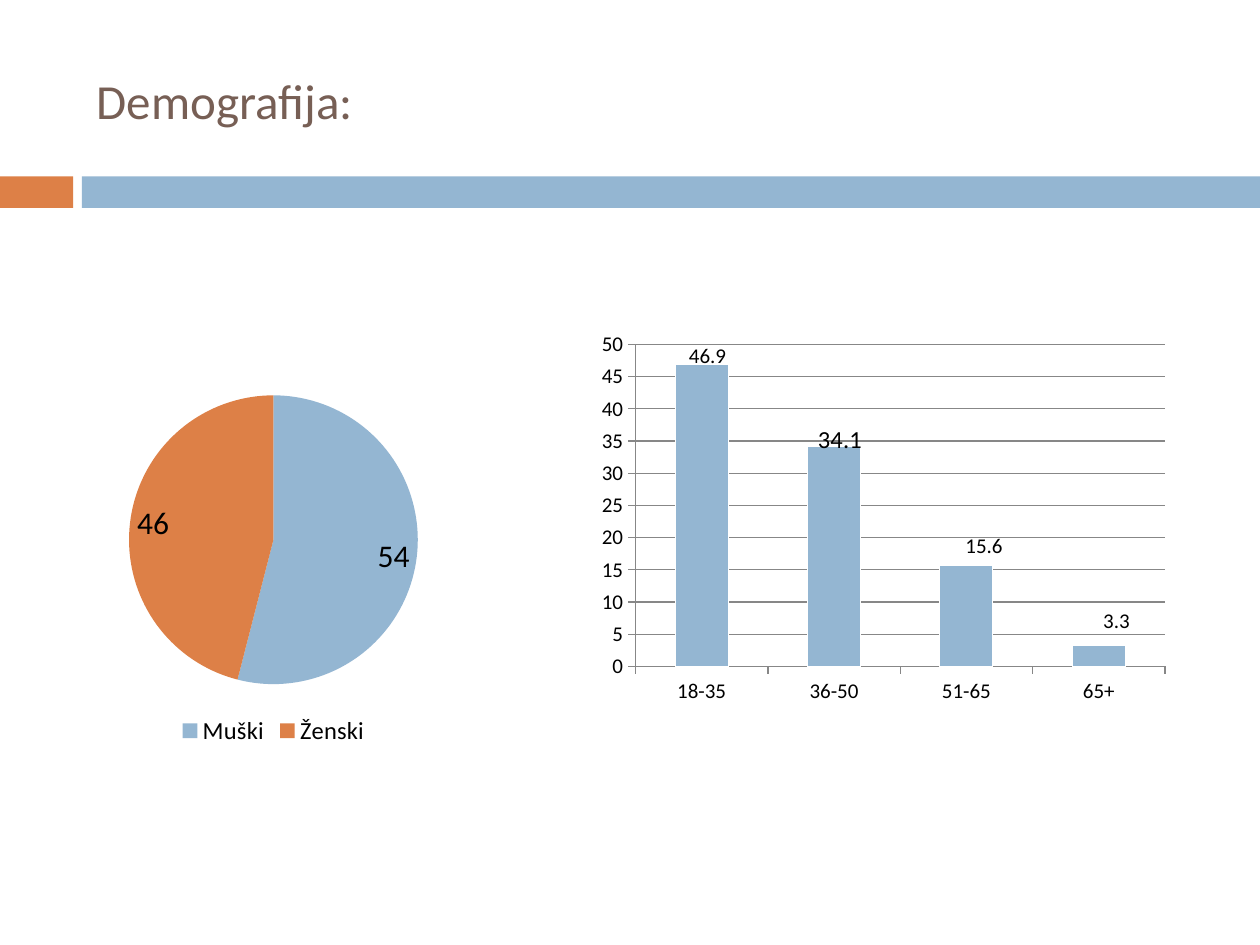
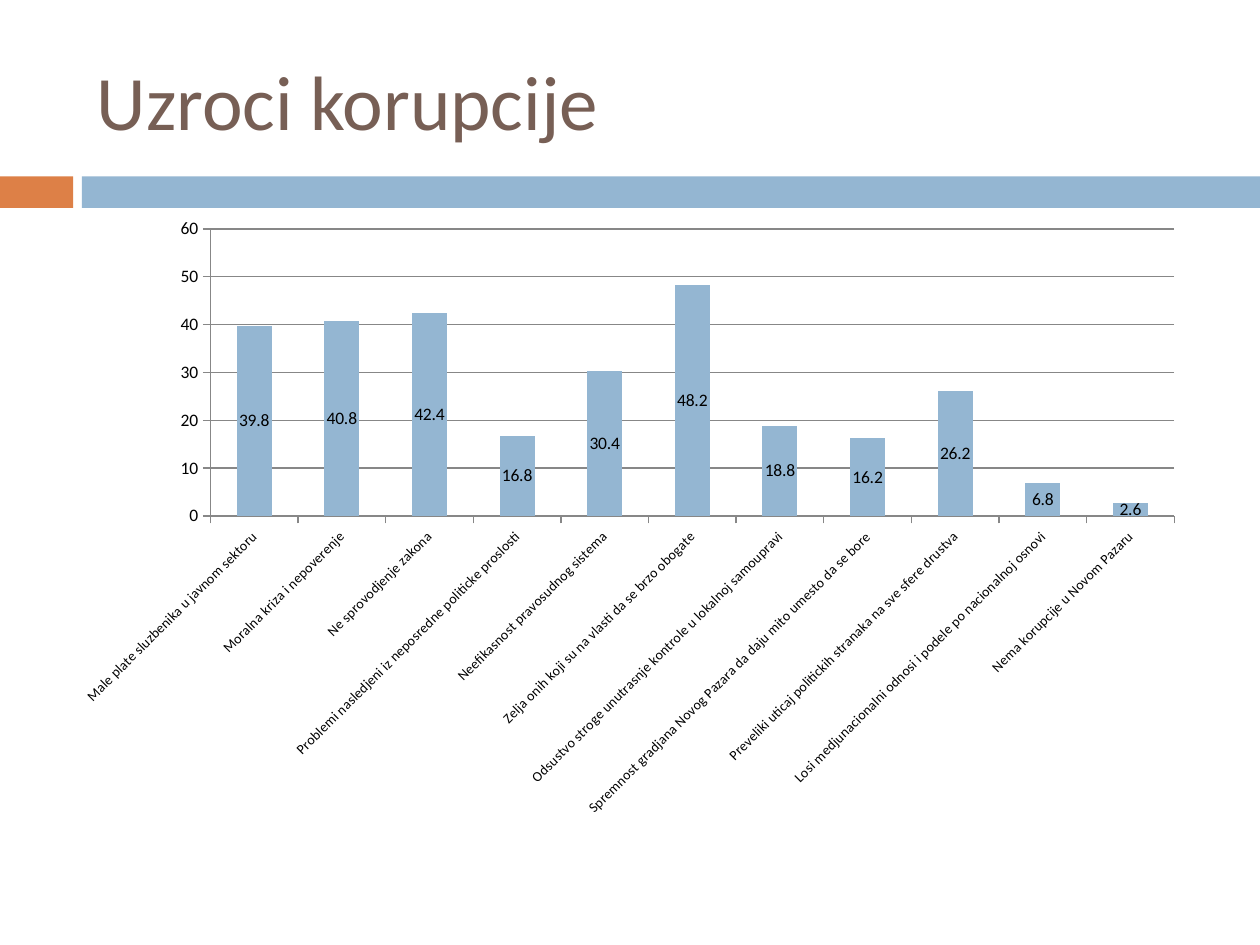
import pptx
import pptx.chart.data
import pptx.dml.color
import pptx.enum.chart
import pptx.enum.shapes
import pptx.enum.text
import pptx.oxml
import pptx.oxml.ns
import pptx.util

BLUE = pptx.dml.color.RGBColor(0x94, 0xB6, 0xD2)
ORANGE = pptx.dml.color.RGBColor(0xDD, 0x80, 0x47)
BROWN = pptx.dml.color.RGBColor(0x77, 0x5F, 0x55)
GREY = pptx.dml.color.RGBColor(0x87, 0x87, 0x87)
BLACK = pptx.dml.color.RGBColor(0, 0, 0)
WHITE = pptx.dml.color.RGBColor(0xFF, 0xFF, 0xFF)
FONT = "Calibri"
WIDTH, HEIGHT = 10, 7.5

TITLE_BOX = (0.67, 0.25, 8.92, 1.08)
BAND_TOP, BAND_HEIGHT = 1.4, 0.25
BAND_PARTS = [(0, 0.58, ORANGE), (0.65, 9.35, BLUE)]
GENDER_BOX = (0.67, 3, 3, 2.96)
AGE_BOX = (4.67, 2.58, 4.67, 3.08)
CAUSES_BOX = (0.5, 1.62, 9, 4.95)

GENDERS = {"Muški": 54, "Ženski": 46}
AGES = {"18-35": 46.9, "36-50": 34.1, "51-65": 15.6, "65+": 3.3}
AGE_LABELS = [(0.01, -0.41, 12), (0.01, -0.3, 14), (0.03, -0.18, 12), (0.03, -0.09, 12)]
CAUSES = {
    "Male plate sluzbenika u javnom sektoru": 39.8,
    "Moralna kriza i nepoverenje": 40.8,
    "Ne sprovodjenje zakona": 42.4,
    "Problemi nasledjeni iz neposredne politicke proslosti": 16.8,
    "Neefikasnost pravosudnog sistema": 30.4,
    "Zelja onih koji su na vlasti da se brzo obogate": 48.2,
    "Odsustvo stroge unutrasnje kontrole u lokalnoj samoupravi": 18.8,
    "Spremnost gradjana Novog Pazara da daju mito umesto da se bore": 16.2,
    "Preveliki uticaj politickih stranaka na sve sfere drustva": 26.2,
    "Losi medjunacionalni odnosi i podele po nacionalnoj osnovi": 6.8,
    "Nema korupcije u Novom Pazaru": 2.6,
}


def inches(box):
    return [pptx.util.Inches(length) for length in box]


def style_font(font, size, color=BLACK):
    font.name = FONT
    font.size = pptx.util.Pt(size)
    font.color.rgb = color


def paint(fill, color):
    fill.solid()
    fill.fore_color.rgb = color


def add_title(slide, box, title, size):
    frame = slide.shapes.add_textbox(*inches(box)).text_frame
    frame.word_wrap = True
    frame.vertical_anchor = pptx.enum.text.MSO_ANCHOR.MIDDLE
    frame.text = title
    style_font(frame.paragraphs[0].runs[0].font, size, BROWN)


def add_band(slide, top, height):
    for left, width, color in BAND_PARTS:
        part = slide.shapes.add_shape(
            pptx.enum.shapes.MSO_SHAPE.RECTANGLE, *inches((left, top, width, height)))
        part.shadow.inherit = False
        paint(part.fill, color)
        part.line.fill.background()


def add_slide(deck, title, size):
    slide = deck.slides.add_slide(deck.slide_layouts[6])
    add_band(slide, BAND_TOP, BAND_HEIGHT)
    add_title(slide, TITLE_BOX, title, size)
    return slide


def add_chart(slide, box, kind, values, size, label_size):
    data = pptx.chart.data.CategoryChartData()
    data.categories = list(values)
    data.add_series("Series 1", list(values.values()))
    chart = slide.shapes.add_chart(kind, *inches(box), data).chart
    chart.has_title = False
    chart.has_legend = False
    style_font(chart.font, size)
    labels = chart.plots[0].series[0].data_labels
    labels.show_value = True
    style_font(labels.font, label_size)
    for leader_lines in chart.element.xpath(".//c:showLeaderLines"):
        leader_lines.set("val", "0")
    return chart


def make_layout(**settings):
    layout = pptx.oxml.parse_xml(
        f'<c:layout {pptx.oxml.ns.nsdecls("c")}><c:manualLayout/></c:layout>')
    for tag, value in settings.items():
        layout[0].append(pptx.oxml.parse_xml(
            f'<c:{tag} {pptx.oxml.ns.nsdecls("c")} val="{value}"/>'))
    return layout


def set_plot_area(chart, x, y, w, h):
    area = chart.element.xpath(".//c:plotArea")[0]
    for previous in area.xpath("./c:layout"):
        area.remove(previous)
    area.insert(0, make_layout(
        layoutTarget="inner", xMode="edge", yMode="edge", x=x, y=y, w=w, h=h))


def add_gender_pie(slide, box):
    chart = add_chart(slide, box, pptx.enum.chart.XL_CHART_TYPE.PIE, GENDERS, 18, 18)
    chart.plots[0].vary_by_categories = True
    series = chart.plots[0].series[0]
    for index, color in enumerate((BLUE, ORANGE)):
        paint(series.points[index].format.fill, color)
    series.data_labels.position = pptx.enum.chart.XL_LABEL_POSITION.BEST_FIT
    chart.has_legend = True
    chart.legend.position = pptx.enum.chart.XL_LEGEND_POSITION.BOTTOM
    chart.legend.include_in_layout = False
    style_font(chart.legend.font, 14)


def add_columns(slide, box, values, size, label_size, category_size, value_size):
    chart = add_chart(
        slide, box, pptx.enum.chart.XL_CHART_TYPE.COLUMN_STACKED, values, size, label_size)
    plot = chart.plots[0]
    plot.vary_by_categories = False
    plot.gap_width = 150
    plot.overlap = 100
    paint(plot.series[0].format.fill, BLUE)
    for axis, axis_size in ((chart.category_axis, category_size), (chart.value_axis, value_size)):
        axis.major_tick_mark = pptx.enum.chart.XL_TICK_MARK.OUTSIDE
        axis.format.line.color.rgb = GREY
        style_font(axis.tick_labels.font, axis_size)
    chart.value_axis.has_major_gridlines = True
    chart.value_axis.major_gridlines.format.line.color.rgb = GREY
    return chart


def add_age_columns(slide, box):
    chart = add_columns(slide, box, AGES, 18, 12, 12, 12)
    set_plot_area(chart, 0.08, 0.05, 0.9, 0.83)
    series = chart.plots[0].series[0]
    series.format.line.color.rgb = WHITE
    for index, (x, y, size) in enumerate(AGE_LABELS):
        style_font(series.points[index].data_label.font, size)
        label = chart.element.xpath(".//c:dLbl")[index]
        label.insert(1, make_layout(x=x, y=y))


def add_cause_columns(slide, box):
    chart = add_columns(slide, box, CAUSES, 10, 10, 8, 10)
    set_plot_area(chart, 0.13, 0.04, 0.85, 0.46)
    chart.element.xpath(".//c:catAx/c:txPr/a:bodyPr")[0].set("rot", "-2700000")


def build_demography(deck):
    slide = add_slide(deck, "Demografija:", 28)
    add_gender_pie(slide, GENDER_BOX)
    add_age_columns(slide, AGE_BOX)


def build_causes(deck):
    slide = add_slide(deck, "Uzroci korupcije", 44)
    add_cause_columns(slide, CAUSES_BOX)


def main():
    deck = pptx.Presentation()
    deck.slide_width, deck.slide_height = inches((WIDTH, HEIGHT))
    build_demography(deck)
    build_causes(deck)
    deck.save("out.pptx")


if __name__ == "__main__":
    main()
